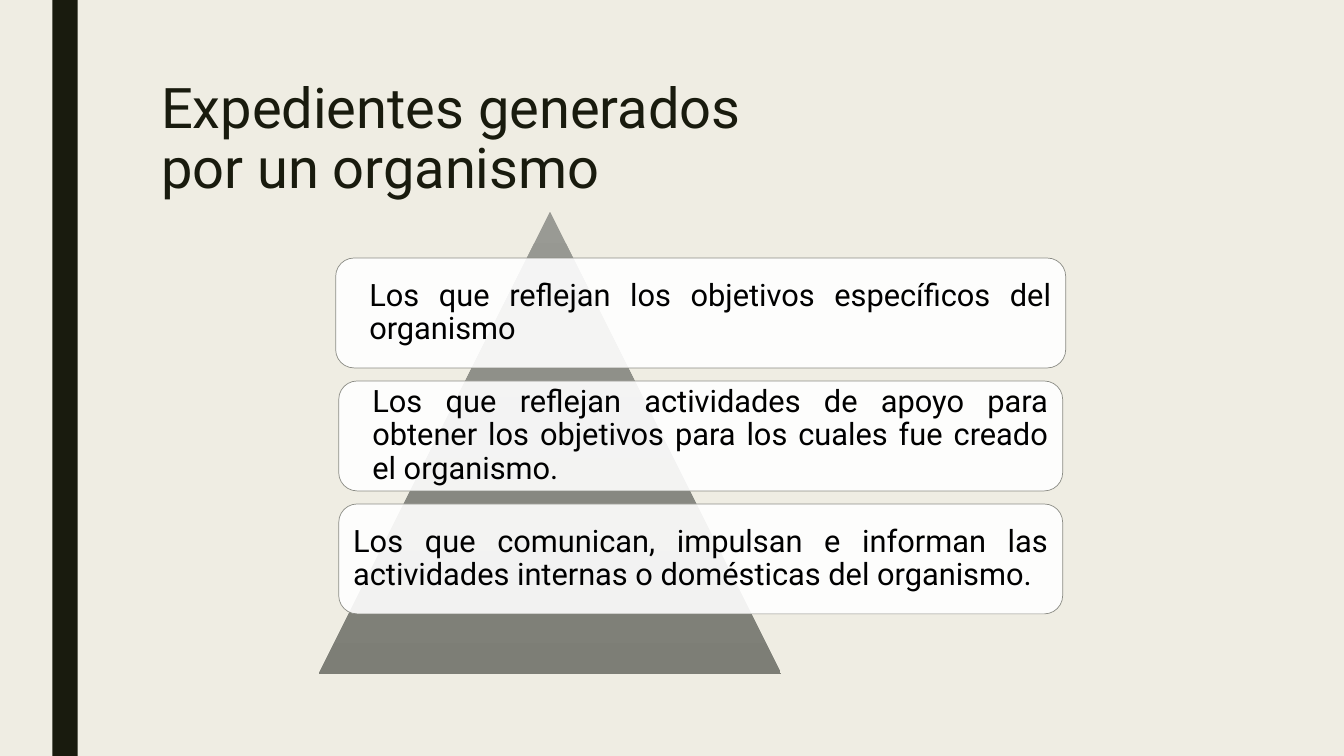
from dataclasses import dataclass

from lxml.etree import SubElement
from pptx import Presentation
from pptx.dml.color import RGBColor as Color
from pptx.enum.shapes import MSO_SHAPE as Shape
from pptx.enum.text import MSO_ANCHOR as Anchor, PP_ALIGN as Align
from pptx.oxml.ns import qn
from pptx.util import Inches, Pt


@dataclass(frozen=True)
class Theme:
    font: str = "Roboto"
    background: Color = Color(0xEF, 0xED, 0xE3)
    dark: Color = Color(0x19, 0x1B, 0x0E)
    text: Color = Color(0, 0, 0)
    card: Color = Color(0xFF, 0xFF, 0xFF)
    outline: Color = Color(0x8C, 0x8D, 0x86)
    pyramid_top: Color = Color(0x99, 0x9A, 0x94)
    pyramid_base: Color = Color(0x7D, 0x7E, 0x76)
    title_size: Pt = Pt(40)
    body_size: Pt = Pt(22)


theme = Theme()


def add_plain_shape(kind, left, top, width, height):
    shape = page.shapes.add_shape(
        kind, Inches(left), Inches(top), Inches(width), Inches(height))
    shape.shadow.inherit = False
    shape.line.fill.background()
    return shape


def add_span(para, text, size, color):
    span = para.add_run()
    span.text = text
    span.font.name = theme.font
    span.font.size = size
    span.font.color.rgb = color


# Page
deck = Presentation()
deck.slide_width, deck.slide_height = Inches(13.33), Inches(7.5)
page = deck.slides.add_slide(deck.slide_layouts[6])
page.background.fill.solid()
page.background.fill.fore_color.rgb = theme.background

# Side bar
bar = add_plain_shape(Shape.RECTANGLE, 0.52, 0, 0.25, 7.5)
bar.fill.solid()
bar.fill.fore_color.rgb = theme.dark

# Title
title = page.shapes.add_textbox(
    Inches(1.5), Inches(0.75), Inches(10.5), Inches(1.62))
title.text_frame.word_wrap = True
para = title.text_frame.paragraphs[0]
para.line_spacing = 0.89
add_span(para, "Expedientes generados", theme.title_size, theme.dark)
para.add_line_break()
add_span(para, "por un organismo", theme.title_size, theme.dark)

# Pyramid
pyramid = add_plain_shape(Shape.ISOSCELES_TRIANGLE, 3.16, 2.1, 4.59, 4.59)
pyramid.fill.gradient()
pyramid.fill.gradient_angle = 270
top_stop, base_stop = pyramid.fill.gradient_stops
top_stop.position, base_stop.position = 0, 1
top_stop.color.rgb = theme.pyramid_top
base_stop.color.rgb = theme.pyramid_base

# Cards: left, width, text indent, text
cards = [
    (3.33, 7.24, 0.19,
     "Los que reflejan los objetivos específicos del organismo"),
    (3.36, 7.18, 0.19,
     "Los que reflejan actividades de apoyo para obtener los objetivos "
     "para los cuales fue creado el organismo."),
    (3.36, 7.18, 0,
     "Los que comunican, impulsan e informan las actividades internas "
     "o domésticas del organismo."),
]
for index, (left, width, indent, text) in enumerate(cards):
    card = add_plain_shape(
        Shape.ROUNDED_RECTANGLE, left, 2.56 + 1.22 * index, width, 1.09)
    card.fill.solid()
    card.fill.fore_color.rgb = theme.card
    card_color = card.fill._xPr.find(qn("a:solidFill"))[0]
    SubElement(card_color, qn("a:alpha")).set("val", "90000")
    card.line.color.rgb = theme.outline
    card.line.width = Pt(0.5)

    frame = card.text_frame
    frame.word_wrap = True
    frame.vertical_anchor = Anchor.MIDDLE
    frame.margin_left = frame.margin_right = Inches(0.09)
    frame.margin_top = frame.margin_bottom = Inches(0.09)
    para = frame.paragraphs[0]
    para.alignment = Align.JUSTIFY
    para.line_spacing = 0.9
    properties = para._p.get_or_add_pPr()
    properties.set("marL", str(Inches(indent)))
    properties.set("indent", "0")
    add_span(para, text, theme.body_size, theme.text)

deck.save("out.pptx")
